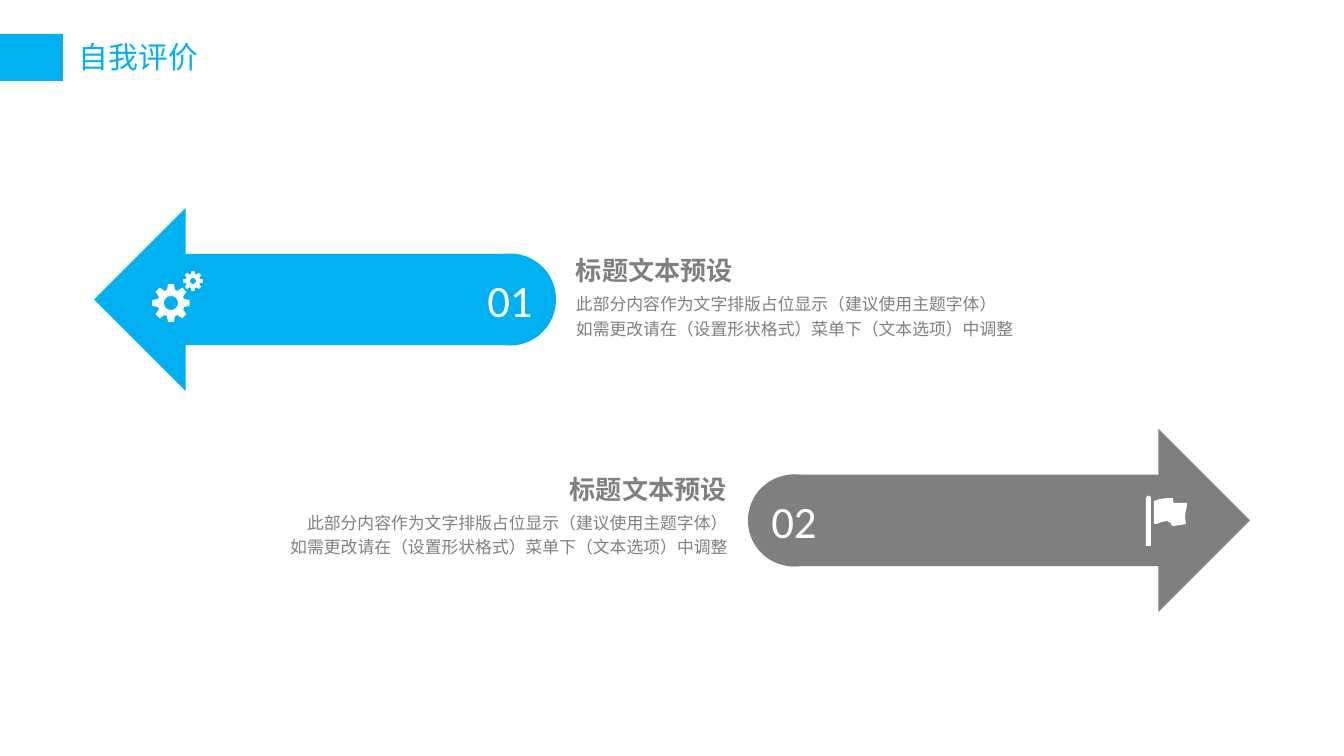
import math

import pptx
import pptx.dml.color
import pptx.enum.shapes
import pptx.enum.text
import pptx.oxml.ns
import pptx.util
from lxml import etree

EMU_PER_PX = 914400 / 134.4
BLUE, GRAY, TEXT_GRAY, WHITE = "00B0F0", "7F7F7F", "808080", "FFFFFF"
CJK_FONT, NUMBER_FONT = "Noto Sans CJK SC", "Calibri"
SHAPE = pptx.enum.shapes.MSO_SHAPE
ALIGN = pptx.enum.text.PP_ALIGN
ANCHOR = pptx.enum.text.MSO_ANCHOR

ARROW_HEIGHT = 183
CIRCLE_SIZE = 92
HEADING = "标题文本预设"
BODY_LINES = [
    "此部分内容作为文字排版占位显示（建议使用主题字体）",
    "如需更改请在（设置形状格式）菜单下（文本选项）中调整",
]
FLAG_POLE = [(1146, 546), (1146, 498), (1147, 496), (1150, 496), (1151, 498), (1151, 546)]
FLAG_CLOTH = [
    (1187, 503), (1180, 503), (1174, 503), (1173, 501), (1173, 498), (1168, 498),
    (1160, 499), (1154, 501), (1154, 524), (1157, 524), (1162, 522), (1167, 521),
    (1171, 523), (1171, 525), (1174, 526), (1180, 525), (1186, 524), (1185, 516),
    (1186, 510), (1187, 506),
]


def px(value):
    return pptx.util.Emu(round(value * EMU_PER_PX))


def color(hex_string):
    return pptx.dml.color.RGBColor.from_string(hex_string)


def paint(shape, fill):
    shape.shadow.inherit = False
    shape.fill.solid()
    shape.fill.fore_color.rgb = color(fill)
    shape.line.fill.background()


def add_preset(shapes, kind, box, fill):
    shape = shapes.add_shape(kind, *map(px, box))
    paint(shape, fill)
    return shape


def add_outline(shapes, contours, fill):
    """Draw closed contours as one shape; an inner contour makes a hole."""
    scaled = [[(px(x), px(y)) for x, y in contour] for contour in contours]
    builder = shapes.build_freeform(*scaled[0][0])
    for index, contour in enumerate(scaled):
        if index:
            builder.move_to(*contour[0])
        builder.add_line_segments(contour[1:], close=True)
    paint(builder.convert_to_shape(), fill)


def write(frame, lines, size, font_name, text_color, align=ALIGN.LEFT,
          bold=False, spacing=None, insets=(0, 0), anchor=ANCHOR.TOP):
    frame.word_wrap = True
    frame.vertical_anchor = anchor
    frame.margin_left = frame.margin_right = px(insets[0])
    frame.margin_top = frame.margin_bottom = px(insets[1])
    paragraph = frame.paragraphs[0]
    paragraph.alignment = align
    if spacing:
        paragraph.line_spacing = spacing
    for index, line in enumerate(lines):
        if index:
            paragraph.add_line_break()
        run = paragraph.add_run()
        run.text = line
        run.font.size = pptx.util.Pt(size)
        run.font.bold = bold
        run.font.name = font_name
        run.font.color.rgb = color(text_color)
        east_asian = etree.SubElement(run.font._element, pptx.oxml.ns.qn("a:ea"))
        east_asian.set("typeface", font_name)


def add_text(shapes, box, lines, size, text_color, **style):
    text_box = shapes.add_textbox(*map(px, box))
    write(text_box.text_frame, lines, size, CJK_FONT, text_color, **style)


def circle_point(center, radius, degrees):
    angle = math.radians(degrees)
    return center[0] + radius * math.cos(angle), center[1] + radius * math.sin(angle)


def add_gear(shapes, center, radius, hole_radius):
    tooth = [(-17, 0.72), (-9, 1), (9, 1), (17, 0.72)]
    rim = [circle_point(center, radius * share, 45 * index + offset)
           for index in range(8) for offset, share in tooth]
    hole = [circle_point(center, hole_radius, -15 * step) for step in range(24)]
    add_outline(shapes, [rim, hole], WHITE)


def add_arrow(shapes, left, top, width, circle_left, number, fill, rotation=0):
    """Draw a block arrow with a round tail that holds the number."""
    arrow = add_preset(shapes, SHAPE.RIGHT_ARROW, (left, top, width, ARROW_HEIGHT), fill)
    arrow.rotation = rotation
    circle_top = top + (ARROW_HEIGHT - CIRCLE_SIZE) / 2
    circle = add_preset(shapes, SHAPE.OVAL,
                        (circle_left, circle_top, CIRCLE_SIZE, CIRCLE_SIZE), fill)
    write(circle.text_frame, [number], 24, NUMBER_FONT, WHITE,
          align=ALIGN.CENTER, anchor=ANCHOR.MIDDLE)


def add_description(shapes, left, top, align):
    style = {"align": align, "insets": (21, 0)}
    add_text(shapes, (left, top, 607, 36), [HEADING], 14, TEXT_GRAY, bold=True, **style)
    add_text(shapes, (left, top + 36, 607, 60), BODY_LINES, 9, TEXT_GRAY,
             spacing=1.2, **style)


def main():
    presentation = pptx.Presentation()
    presentation.slide_width = px(1344)
    presentation.slide_height = px(756)
    slide = presentation.slides.add_slide(presentation.slide_layouts[6])

    add_text(slide.shapes, (69, 34, 270, 47), ["自我评价"], 16, BLUE, insets=(10, 5))
    add_preset(slide.shapes, SHAPE.RECTANGLE, (0, 34, 63, 47), BLUE)

    second = slide.shapes.add_group_shape().shapes
    add_arrow(second, 790, 429, 460, 748, "02", GRAY)
    add_outline(second, [FLAG_CLOTH], WHITE)
    add_outline(second, [FLAG_POLE], WHITE)
    add_description(second, 141, 473, ALIGN.RIGHT)

    first = slide.shapes.add_group_shape().shapes
    add_arrow(first, 94, 208, 413, 464, "01", BLUE, rotation=180)
    add_gear(first, (193, 281), 10, 3)
    add_gear(first, (171, 303), 19, 7)
    add_description(first, 555, 254, ALIGN.LEFT)

    presentation.save("out.pptx")


if __name__ == "__main__":
    main()
